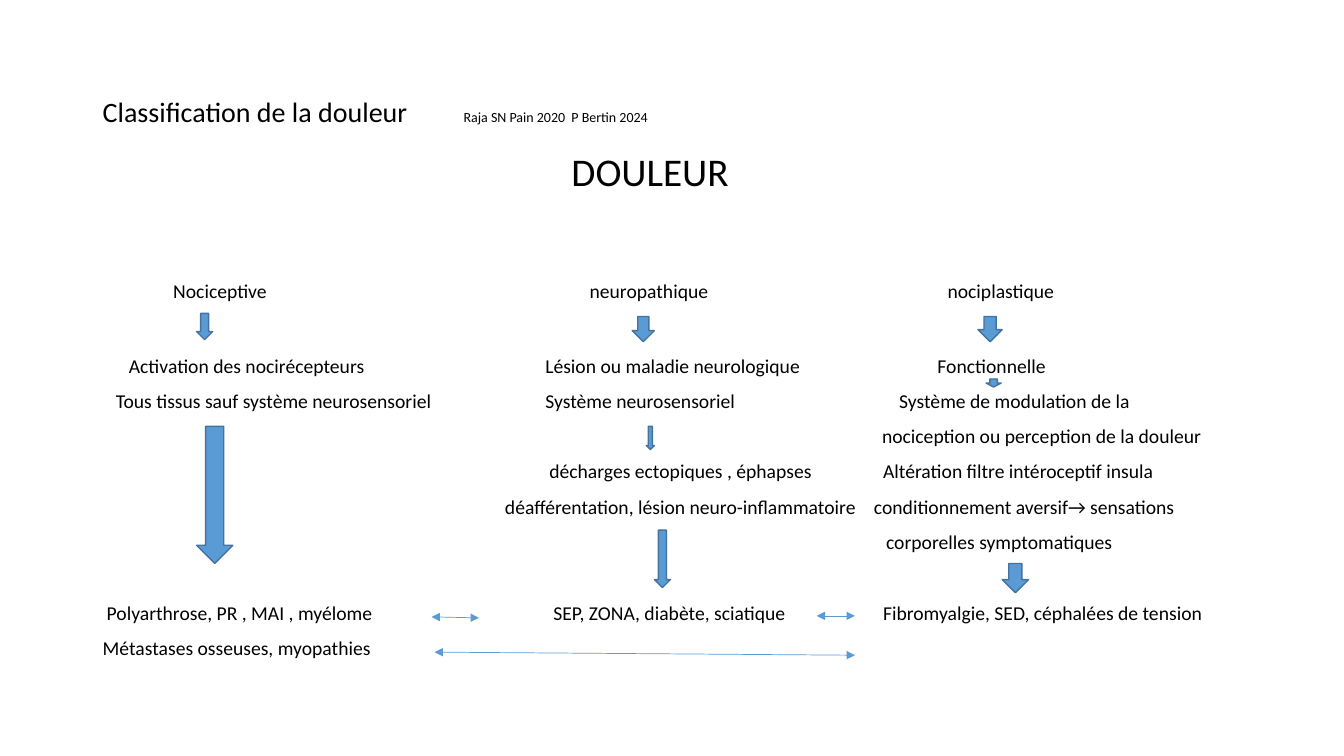
"""Build a slide that classifies pain into three mechanisms."""
from lxml import etree
from pptx import Presentation
from pptx.dml.color import RGBColor
from pptx.enum.shapes import MSO_CONNECTOR, MSO_SHAPE
from pptx.enum.text import MSO_ANCHOR
from pptx.oxml.ns import qn
from pptx.util import Inches, Pt

STRAIGHT = MSO_CONNECTOR.STRAIGHT
DOWN_ARROW = MSO_SHAPE.DOWN_ARROW
MIDDLE = MSO_ANCHOR.MIDDLE
TOP = MSO_ANCHOR.TOP
BLACK = RGBColor(0x00, 0x00, 0x00)
BLUE = RGBColor(0x5B, 0x9B, 0xD5)
DARK_BLUE = RGBColor(0x43, 0x73, 0x9E)
TEXT_LEFT = 1.02

deck = Presentation()
deck.slide_width = Inches(13.33)
deck.slide_height = Inches(7.5)
page = deck.slides.add_slide(deck.slide_layouts[6])


def add_frame(top, height, anchor):
    """Add a full-width text box and return its text frame."""
    box = page.shapes.add_textbox(
        Inches(0.92), Inches(top), Inches(11.5), Inches(height))
    frame = box.text_frame
    frame.word_wrap = True
    frame.vertical_anchor = anchor
    return frame


def fill_line(para, pieces, gap=0):
    """Write pieces of (text, left, size), each at its own tab stop."""
    para.line_spacing = 0.9
    para.space_before = Pt(gap)
    stops = etree.SubElement(para._p.get_or_add_pPr(), qn("a:tabLst"))
    for text, left, size in pieces:
        span = para.add_run()
        span.text = text
        if left > TEXT_LEFT:
            span.text = "\t" + text
            etree.SubElement(stops, qn("a:tab"), algn="l",
                             pos=str(Inches(left - TEXT_LEFT)))
        span.font.name = "Calibri"
        span.font.size = Pt(size)
        span.font.color.rgb = BLACK


title = add_frame(0.4, 1.45, MIDDLE)
fill_line(title.paragraphs[0], [
    ("Classification de la douleur", TEXT_LEFT, 20),
    ("Raja SN Pain 2020  P Bertin 2024", 4.6, 10),
])

body = add_frame(1.46, 5.29, TOP)
fill_line(body.paragraphs[0], [("DOULEUR", 5.67, 28)])

rows = [
    (62.5, [("Nociceptive", 1.72),
            ("neuropathique", 5.85),
            ("nociplastique", 9.4)]),
    (38, [("Activation des nocirécepteurs", 1.28),
          ("Lésion ou maladie neurologique", 5.41),
          ("Fonctionnelle", 9.3)]),
    (10, [("Tous tissus sauf système neurosensoriel", 1.15),
          ("Système neurosensoriel", 5.41),
          ("Système de modulation de la", 8.92)]),
    (10, [("nociception ou perception de la douleur", 8.75)]),
    (10, [("décharges ectopiques , éphapses", 5.45),
          ("Altération filtre intéroceptif insula", 8.76)]),
    (10, [("déafférentation, lésion neuro-inflammatoire", 5.01),
          ("conditionnement aversif→ sensations", 8.67)]),
    (10, [("corporelles symptomatiques", 8.79)]),
    (35.4, [("Polyarthrose, PR , MAI , myélome", 1.06),
            ("SEP, ZONA, diabète, sciatique", 5.49),
            ("Fibromyalgie, SED, céphalées de tension", 8.76)]),
    (10, [("Métastases osseuses, myopathies", TEXT_LEFT)]),
]
for gap, row in rows:
    pieces = [(text, left, 14) for text, left in row]
    fill_line(body.add_paragraph(), pieces, gap=gap)

down_arrows = [
    (1.95, 3.11, 0.16, 0.26),
    (6.27, 3.14, 0.22, 0.25),
    (9.7, 3.14, 0.24, 0.25),
    (6.41, 4.23, 0.08, 0.23),
    (9.78, 3.76, 0.15, 0.08),
    (1.95, 4.23, 0.36, 1.36),
    (6.49, 5.26, 0.16, 0.57),
    (9.94, 5.59, 0.26, 0.29),
]
for bounds in down_arrows:
    arrow = page.shapes.add_shape(DOWN_ARROW, *map(Inches, bounds))
    arrow.shadow.inherit = False
    arrow.fill.solid()
    arrow.fill.fore_color.rgb = BLUE
    arrow.line.color.rgb = DARK_BLUE
    arrow.line.width = Pt(1)

overlap_links = [
    (4.28, 6.12, 4.75, 6.13),
    (8.1, 6.11, 8.48, 6.11),
    (4.31, 6.47, 8.48, 6.5),
]
for ends in overlap_links:
    link = page.shapes.add_connector(STRAIGHT, *map(Inches, ends))
    link.line.color.rgb = BLUE
    link.line.width = Pt(0.5)
    outline = link.line._get_or_add_ln()
    for tip in ("a:headEnd", "a:tailEnd"):
        etree.SubElement(outline, qn(tip), type="triangle")
    etree.SubElement(link._element.spPr, qn("a:effectLst"))

deck.save("out.pptx")
